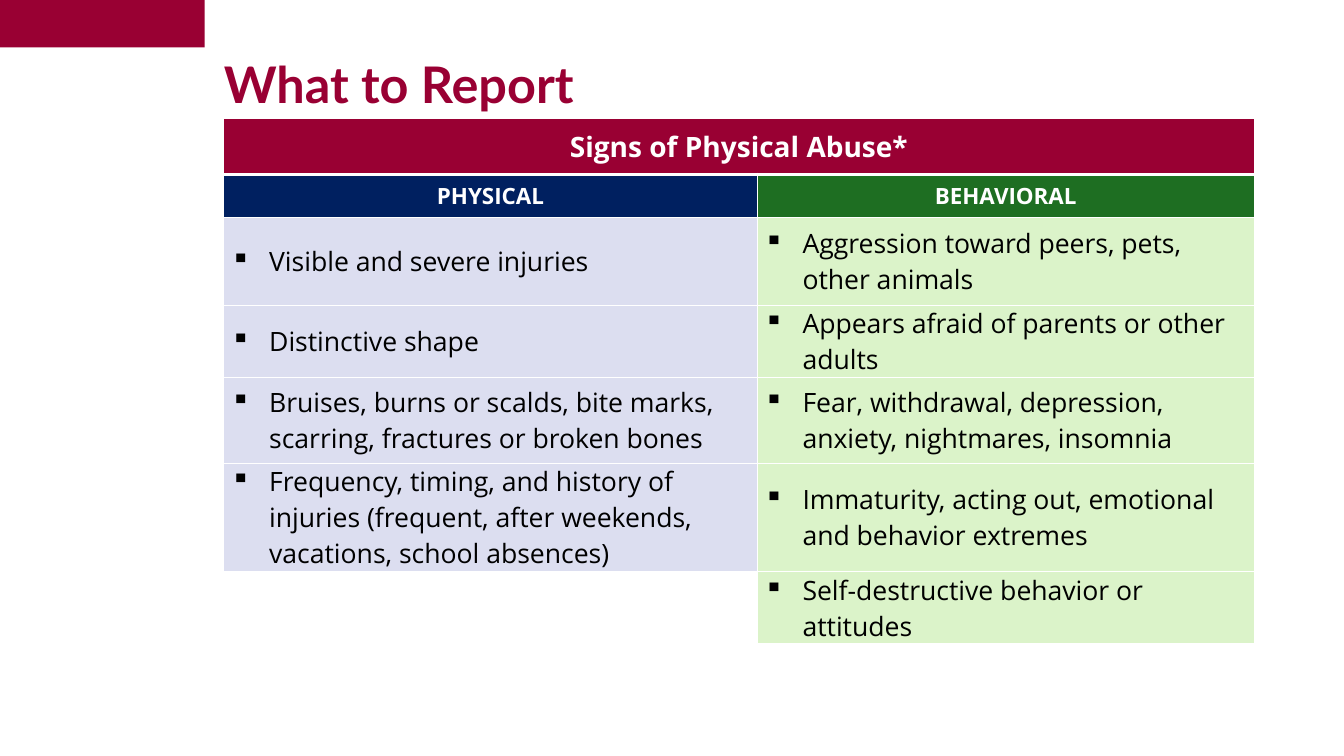
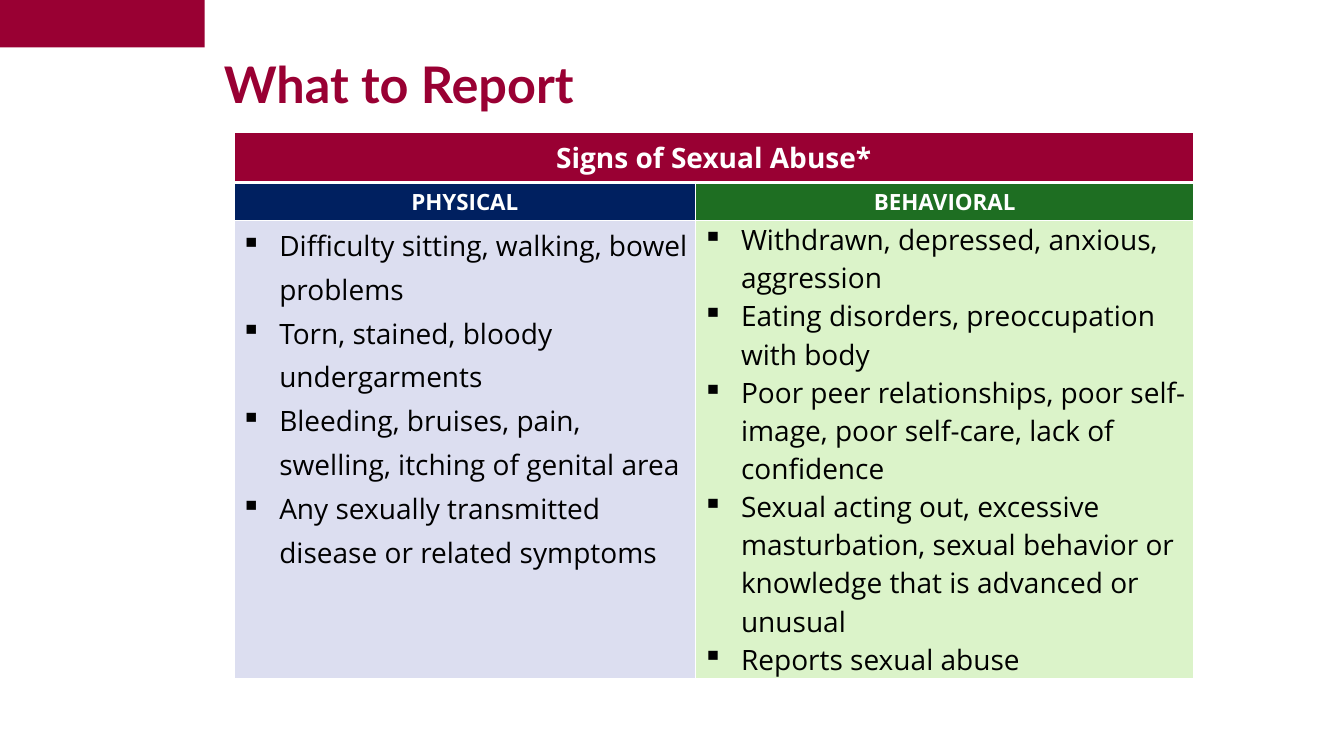
from lxml.etree import SubElement
from pptx import Presentation
from pptx.dml.color import RGBColor
from pptx.enum.shapes import MSO_SHAPE as Shape
from pptx.enum.text import MSO_ANCHOR as Anchor, PP_ALIGN as Align
from pptx.oxml.ns import qn
from pptx.util import Inches, Pt

CRIMSON, WHITE, BLACK = "990033", "FFFFFF", "000000"
TITLE_FONT, BODY_FONT = "Lato", "Open Sans"
TITLE_BOX = (2.22, 0.48, 10.67, 0.69)
BAND_SIZE = (2.03, 0.47)
HEADINGS = ("PHYSICAL", "BEHAVIORAL")
HEADING_FILLS = ("002060", "1E6E22")
COLUMN_FILLS = ("DCDEF0", "DBF3C9")
HANGING = 0.38

# Each body cell is a list of bullets; an empty list leaves the cell blank.
SLIDES = [
    {
        "title": "What to Report",
        "banner": "Signs of Physical Abuse*",
        "corner": (2.22, 1.17),
        "columns": (5.29, 4.93),
        "rows": (0.56, 0.43, 0.87, 0.7, 0.85, 1.05, 0.71),
        "size": 19,
        "anchor": Anchor.MIDDLE,
        "spacing": (None, None),
        "body": [
            (["Visible and severe injuries"],
             ["Aggression toward peers, pets, other animals"]),
            (["Distinctive shape"],
             ["Appears afraid of parents or other adults"]),
            (["Bruises, burns or scalds, bite marks, scarring, fractures or broken bones"],
             ["Fear, withdrawal, depression, anxiety, nightmares, insomnia"]),
            (["Frequency, timing, and history of injuries "
              "(frequent, after weekends, vacations, school absences)"],
             ["Immaturity, acting out, emotional and behavior extremes"]),
            ([], ["Self-destructive behavior or attitudes"]),
        ],
    },
    {
        "title": "What to Report",
        "banner": "Signs of Sexual Abuse*",
        "corner": (2.32, 1.31),
        "columns": (4.58, 4.94),
        "rows": (0.5, 0.38, 4.5),
        "size": 20,
        "anchor": Anchor.TOP,
        "spacing": (1.15, None),
        "body": [
            (["Difficulty sitting, walking, bowel problems",
              "Torn, stained, bloody undergarments",
              "Bleeding, bruises, pain, swelling, itching of genital area",
              "Any sexually transmitted disease or related symptoms"],
             ["Withdrawn, depressed, anxious, aggression",
              "Eating disorders, preoccupation with body",
              "Poor peer relationships, poor self-image, poor self-care, lack of confidence",
              "Sexual acting out, excessive masturbation, sexual behavior or "
              "knowledge that is advanced or unusual",
              "Reports sexual abuse"]),
        ],
    },
]


def rgb(color):
    return RGBColor.from_string(color)


def add_bullet(paragraph):
    props = paragraph._p.get_or_add_pPr()
    props.set("marL", str(Inches(HANGING)))
    props.set("indent", str(-Inches(HANGING)))
    SubElement(props, qn("a:buChar"), char="▪")


def write(frame, lines, size, color=BLACK, font=BODY_FONT, bold=False,
          align=Align.LEFT, spacing=None, bullets=False):
    for index, line in enumerate(lines):
        paragraph = frame.add_paragraph() if index else frame.paragraphs[0]
        if bullets:
            add_bullet(paragraph)
        paragraph.alignment = align
        if spacing:
            paragraph.line_spacing = spacing
        run = paragraph.add_run()
        run.text = line
        run.font.name, run.font.size, run.font.bold = font, Pt(size), bold
        run.font.color.rgb = rgb(color)


def style_cell(cell, fill, anchor=Anchor.MIDDLE, top=1, bottom=1):
    """Set margins, white borders (points) and fill; no fill when fill is None."""
    cell.margin_left = cell.margin_right = Inches(0.07)
    cell.margin_top = cell.margin_bottom = 0
    cell.vertical_anchor = anchor
    props = cell._tc.get_or_add_tcPr()
    for side, width in (("L", 1), ("R", 1), ("T", top), ("B", bottom)):
        border = SubElement(props, qn(f"a:ln{side}"), w=str(Pt(width)))
        SubElement(SubElement(border, qn("a:solidFill")), qn("a:srgbClr"), val=WHITE)
    if fill:
        cell.fill.solid()
        cell.fill.fore_color.rgb = rgb(fill)
    else:
        cell.fill.background()


def set_up_layout(deck):
    layout = deck.slide_layouts.get_by_name("Title Only")
    title = layout.placeholders[0]
    title.left, title.top, title.width, title.height = map(Inches, TITLE_BOX)
    frame = title.text_frame
    frame.margin_left = frame.margin_right = frame.margin_top = frame.margin_bottom = 0
    frame.vertical_anchor = Anchor.MIDDLE
    return layout


def add_master_band(deck, slide):
    """Draw the corner band and move it to the master, behind everything."""
    band = slide.shapes.add_shape(Shape.RECTANGLE, 0, 0, *map(Inches, BAND_SIZE))
    band.shadow.inherit = False
    band.fill.solid()
    band.fill.fore_color.rgb = rgb(CRIMSON)
    band.line.fill.background()
    deck.slide_master.shapes._spTree.insert(2, band._element)


def add_signs_table(slide, content):
    columns, rows = content["columns"], content["rows"]
    table = slide.shapes.add_table(
        len(rows), len(columns), *map(Inches, content["corner"]),
        Inches(sum(columns)), Inches(sum(rows))).table
    table.first_row = table.horz_banding = False
    for column, width in zip(table.columns, columns):
        column.width = Inches(width)
    for row, height in zip(table.rows, rows):
        row.height = Inches(height)

    header = {"color": WHITE, "bold": True, "align": Align.CENTER}
    banner = table.cell(0, 0)
    banner.merge(table.cell(0, 1))
    for index in range(len(columns)):
        style_cell(table.cell(0, index), CRIMSON, bottom=3)
    write(banner.text_frame, [content["banner"]], 20, **header)

    for index, (heading, fill) in enumerate(zip(HEADINGS, HEADING_FILLS)):
        cell = table.cell(1, index)
        style_cell(cell, fill, top=3)
        write(cell.text_frame, [heading], 16, **header)

    for row, signs in enumerate(content["body"], start=2):
        for index, lines in enumerate(signs):
            cell = table.cell(row, index)
            style_cell(cell, COLUMN_FILLS[index] if lines else None, content["anchor"])
            write(cell.text_frame, lines, content["size"],
                  spacing=content["spacing"][index], bullets=True)


def main():
    deck = Presentation()
    deck.slide_width, deck.slide_height = Inches(13.33), Inches(7.5)
    layout = set_up_layout(deck)
    for content in SLIDES:
        slide = deck.slides.add_slide(layout)
        write(slide.shapes.title.text_frame, [content["title"]], 36,
              color=CRIMSON, font=TITLE_FONT, bold=True)
        add_signs_table(slide, content)
    add_master_band(deck, deck.slides[0])
    deck.save("out.pptx")


if __name__ == "__main__":
    main()
